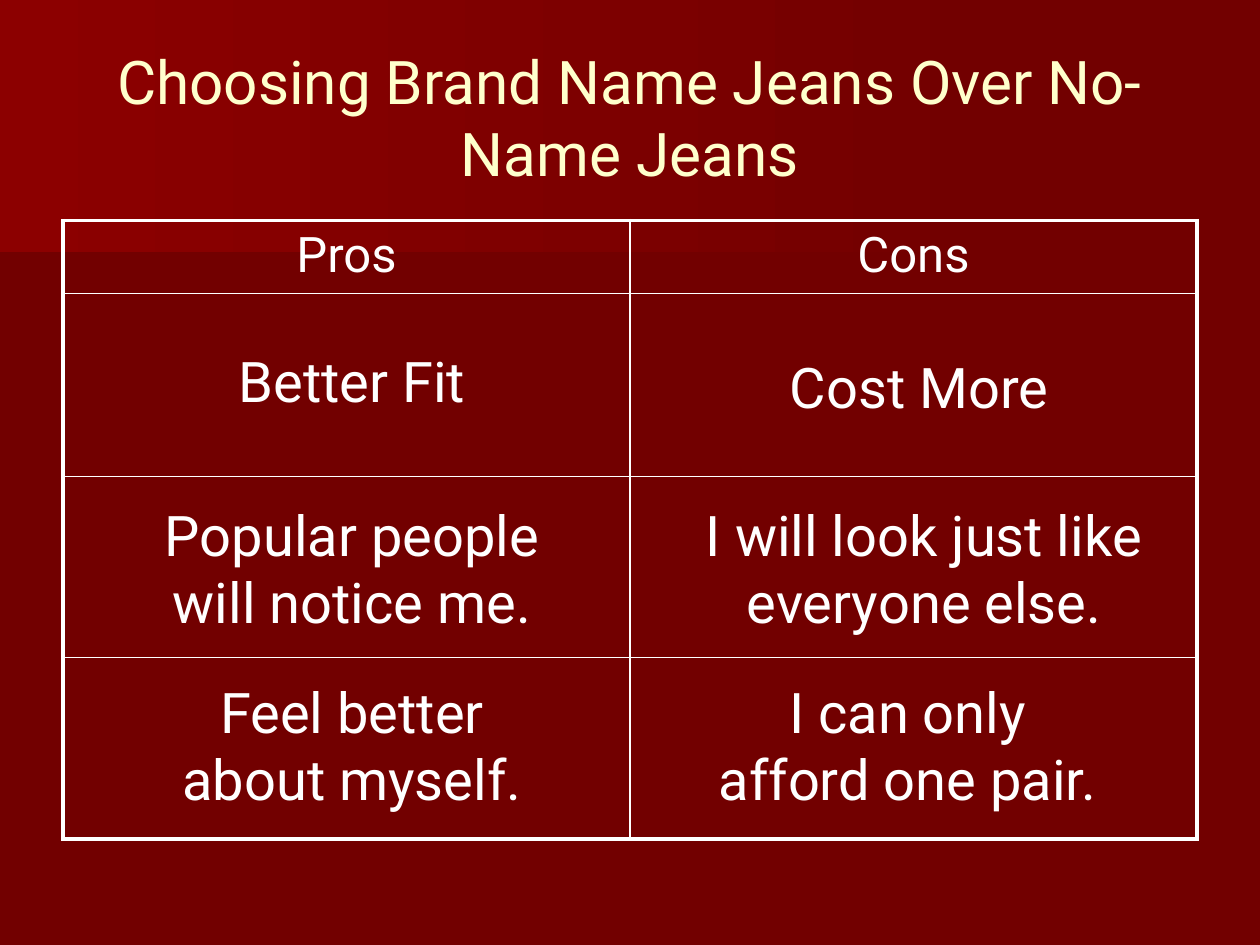
import pptx
import pptx.dml.color
import pptx.enum.text
import pptx.util
from lxml import etree
from pptx.oxml.ns import qn

Inches = pptx.util.Inches
Pt = pptx.util.Pt
FONT = "Roboto"
WHITE, CREAM, MAROON = "FFFFFF", "FFFFCC", "720000"


def colour(code):
    return pptx.dml.color.RGBColor.from_string(code)


def set_format(target, values):
    for name, value in values.items():
        setattr(target, name, value)


class SlideBuilder:
    """Holds the text style and the slide being built."""

    def __init__(self, deck, background):
        self.slide = deck.slides.add_slide(deck.slide_layouts[6])
        self.shapes = self.slide.shapes
        fill = self.slide.background.fill
        fill.solid()
        fill.fore_color.rgb = colour(background)

    def add_wording(self, frame, text, size, code, before=0):
        para = frame.paragraphs[0]
        set_format(para, {"alignment": pptx.enum.text.PP_ALIGN.CENTER,
                          "space_before": Pt(before)})
        span = para.add_run()
        span.text = text
        set_format(span.font, {"name": FONT, "size": Pt(size)})
        span.font.color.rgb = colour(code)

    def add_text(self, area, text, size, code, before=0, inset=0.05,
                 anchor=pptx.enum.text.MSO_ANCHOR.TOP):
        box = self.shapes.add_textbox(*map(Inches, area))
        margins = {f"margin_{side}": Inches(inset)
                   for side in ("left", "top", "right", "bottom")}
        set_format(box.text_frame, {
            "word_wrap": True, "vertical_anchor": anchor, **margins})
        self.add_wording(box.text_frame, text, size, code, before)

    def add_band(self, points, right, left):
        builder = self.shapes.build_freeform(*points[0], scale=Inches(1))
        builder.add_line_segments(points[1:], close=True)
        shape = builder.convert_to_shape()
        shape.shadow.inherit = False
        shape.line.fill.background()
        shape.fill.gradient()
        shape.fill.gradient_angle = 180
        for stop, code in zip(shape.fill.gradient_stops, (right, left)):
            stop.color.rgb = colour(code)

    def add_border(self, cell, side, width):
        line = etree.SubElement(cell._tc.get_or_add_tcPr(), qn(f"a:ln{side}"),
                                w=str(Pt(width)))
        fill = etree.SubElement(line, qn("a:solidFill"))
        etree.SubElement(fill, qn("a:srgbClr"), val=WHITE)

    def add_grid(self, left, top, widths, heights, headings):
        last_row, last_column = len(heights) - 1, len(widths) - 1
        frame = self.shapes.add_table(
            len(heights), len(widths), Inches(left), Inches(top),
            Inches(sum(widths)), Inches(sum(heights)))
        table = frame.table
        set_format(table, {"first_row": False, "horz_banding": False})
        for column, width in zip(table.columns, widths):
            column.width = Inches(width)
        for r, height in enumerate(heights):
            table.rows[r].height = Inches(height)
            for c in range(len(widths)):
                cell = table.cell(r, c)
                set_format(cell, {"margin_left": Inches(0.05),
                                  "margin_right": Inches(0.05)})
                outer = {"L": c == 0, "R": c == last_column,
                         "T": r == 0, "B": r == last_row}
                for side, is_outer in outer.items():
                    self.add_border(cell, side, 2.25 if is_outer else 1)
                cell.fill.background()
        for c, heading in enumerate(headings):
            self.add_wording(table.cell(0, c).text_frame, heading, 28, WHITE,
                             before=6)


def main():
    deck = pptx.Presentation()
    set_format(deck, {"slide_width": Inches(10), "slide_height": Inches(7.5)})
    page = SlideBuilder(deck, MAROON)

    # Background bands
    page.add_band([(7.78, 1.53), (0, 2.17), (0, 1.01), (7.79, 1.01), (7.78, 1.28)],
                  MAROON, "6B0000")
    page.add_band([(7.92, 1.62), (0, 2.08), (0, 0), (7.92, 0)], MAROON, "8C0000")

    # Title
    page.add_text((0.5, 0.3, 9, 1.25),
                  "Choosing Brand Name Jeans Over No-Name Jeans", 34.4, CREAM,
                  inset=0, anchor=pptx.enum.text.MSO_ANCHOR.MIDDLE)

    # Grid with headings
    page.add_grid(0.5, 1.75, [4.5, 4.5], [0.58, 1.45, 1.44, 1.44],
                  ["Pros", "Cons"])

    # Arguments laid over the grid: left, top, width, height, wording
    arguments = [
        (1.17, 2.7, 3.25, 0.64, "Better Fit"),
        (5.67, 2.75, 3.25, 0.64, "Cost More"),
        (1.17, 3.92, 3.25, 1.18, "Popular people will notice me."),
        (5.42, 3.92, 3.83, 1.18, "I will look just like everyone else."),
        (1.17, 5.33, 3.25, 1.18, "Feel better about myself."),
        (5.58, 5.33, 3.25, 1.18, "I can only afford one pair."),
    ]
    for *area, wording in arguments:
        page.add_text(area, wording, 32, WHITE, before=19)

    deck.save("out.pptx")


if __name__ == "__main__":
    main()
